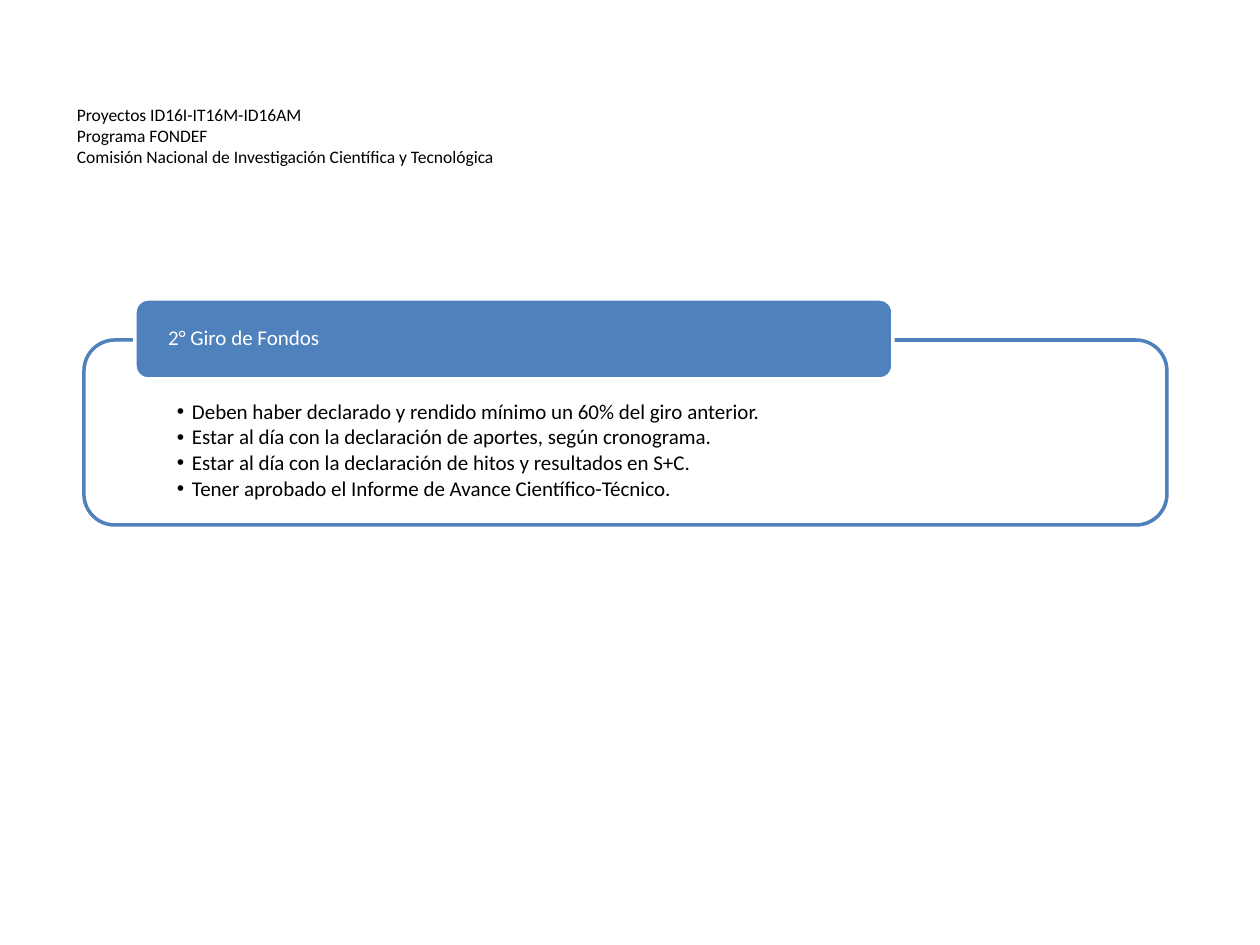
from lxml import etree
from pptx import Presentation
from pptx.dml.color import RGBColor
from pptx.enum.shapes import MSO_SHAPE
from pptx.enum.text import MSO_ANCHOR
from pptx.oxml.ns import qn
from pptx.util import Pt

PX = 914400 / 126
ROUNDED = MSO_SHAPE.ROUNDED_RECTANGLE
TOP, MIDDLE = MSO_ANCHOR.TOP, MSO_ANCHOR.MIDDLE
BLACK = RGBColor(0x00, 0x00, 0x00)
WHITE = RGBColor(0xFF, 0xFF, 0xFF)
BLUE = RGBColor(0x4F, 0x81, 0xBD)
FONT = "Calibri"

HEADING = (
    "Proyectos ID16I-IT16M-ID16AM\v"
    "Programa FONDEF\v"
    "Comisión Nacional de Investigación Científica y Tecnológica"
)
PANEL_TITLE = "2° Giro de Fondos"
REQUIREMENTS = [
    "Deben haber declarado y rendido mínimo un 60% del giro anterior.",
    "Estar al día con la declaración de aportes, según cronograma.",
    "Estar al día con la declaración de hitos y resultados en S+C.",
    "Tener aprobado el Informe de Avance Científico-Técnico.",
]


def px(length):
    return round(length * PX)


def add_rounded_box(page, bounds, fill, line, opacity=100):
    box = page.shapes.add_shape(ROUNDED, *map(px, bounds))
    box.shadow.inherit = False
    box.fill.solid()
    box.fill.fore_color.rgb = fill
    box.line.color.rgb = line
    box.line.width = Pt(2)
    if opacity < 100:
        color = box.fill._xPr.find(qn("a:solidFill"))[0]
        etree.SubElement(color, qn("a:alpha"), val=str(opacity * 1000))


def add_bullet(para, indent):
    properties = para._p.get_or_add_pPr()
    properties.set("marL", str(px(indent)))
    properties.set("indent", str(-px(indent)))
    etree.SubElement(properties, qn("a:buFont"), typeface="Arial")
    etree.SubElement(properties, qn("a:buChar"), char="•")


def add_text(page, bounds, lines, size=12, color=BLACK, anchor=MIDDLE,
             insets=(13, 6, 13, 6), spacing=None, after=None, bullet_indent=0):
    frame = page.shapes.add_textbox(*map(px, bounds)).text_frame
    frame.word_wrap = True
    frame.vertical_anchor = anchor
    (frame.margin_left, frame.margin_top,
     frame.margin_right, frame.margin_bottom) = map(px, insets)
    for index, line in enumerate(lines):
        para = frame.add_paragraph() if index else frame.paragraphs[0]
        para.text = line
        if bullet_indent:
            add_bullet(para, bullet_indent)
        if spacing:
            para.line_spacing = spacing
        if after is not None:
            para.space_after = Pt(after)
        for span in para.runs:
            span.font.name = FONT
            span.font.size = Pt(size)
            span.font.color.rgb = color


def main():
    deck = Presentation()
    deck.slide_width, deck.slide_height = px(1260), px(945)
    page = deck.slides.add_slide(deck.slide_layouts[6])

    add_rounded_box(page, (84, 340, 1083, 185), WHITE, BLUE, opacity=90)
    add_text(page, (93, 349, 1065, 167), REQUIREMENTS, anchor=TOP,
             insets=(84, 52, 84, 11), spacing=0.9, after=1.8, bullet_indent=15)
    add_rounded_box(page, (135, 299, 758, 80), BLUE, WHITE)
    add_text(page, (139, 303, 750, 72), [PANEL_TITLE], color=WHITE,
             insets=(29, 0, 29, 0), spacing=0.9, after=4.2)
    add_text(page, (64, 66, 984, 140), [HEADING], size=10)

    deck.save("out.pptx")


if __name__ == "__main__":
    main()
